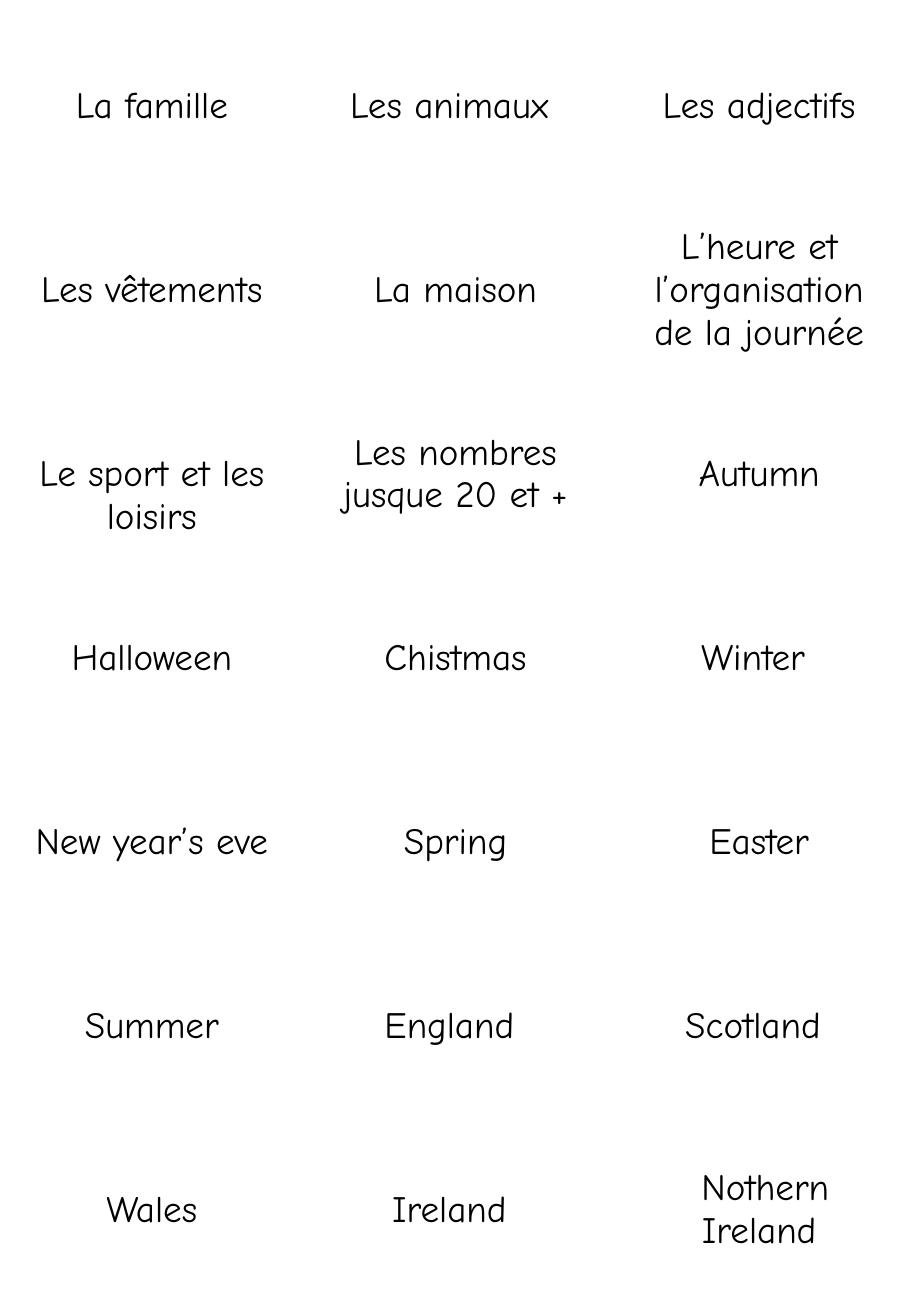
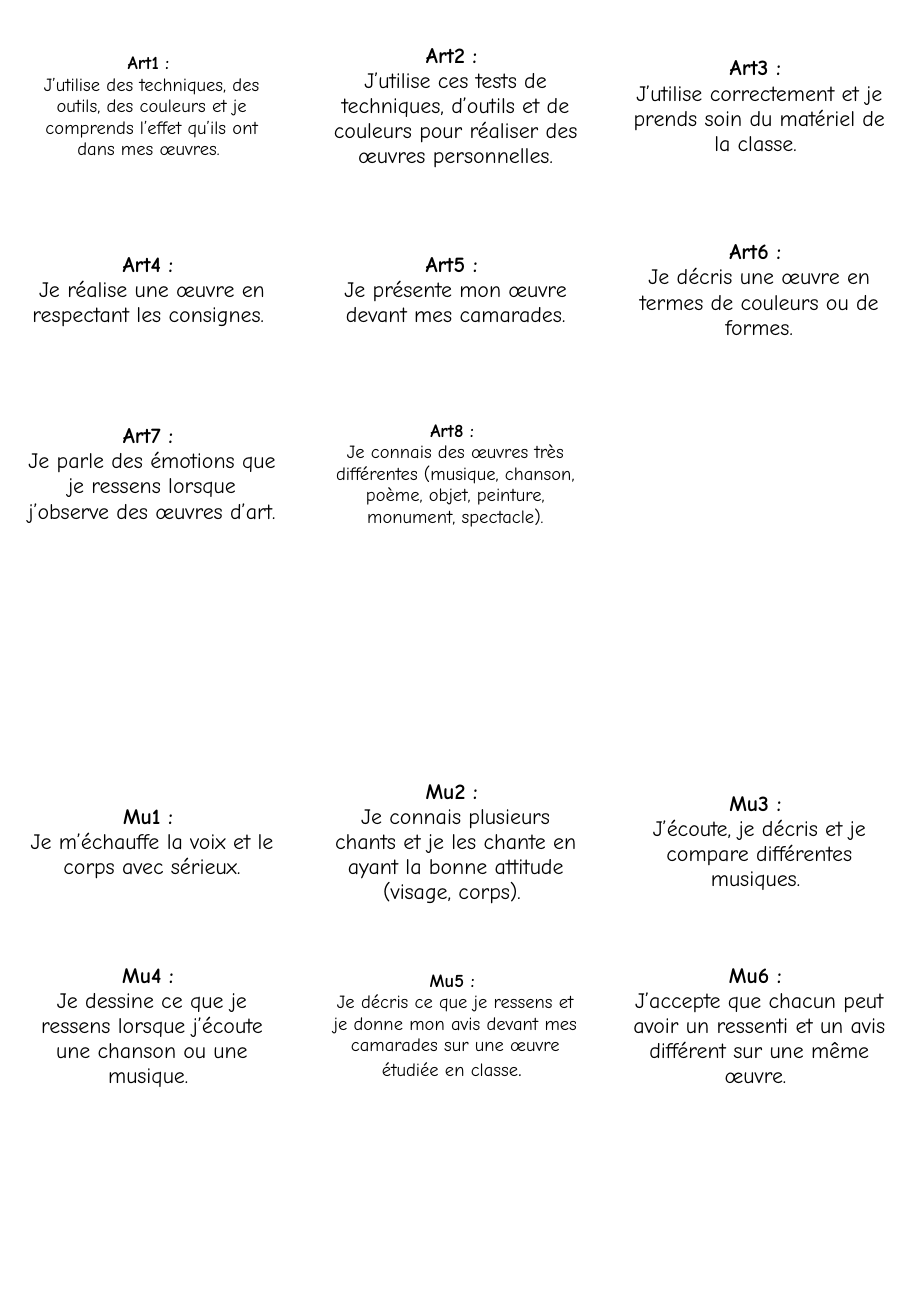
from pptx import Presentation
from pptx.dml.color import RGBColor
from pptx.enum.text import MSO_ANCHOR, PP_ALIGN
from pptx.util import Pt

CENTER = PP_ALIGN.CENTER
MIDDLE = MSO_ANCHOR.MIDDLE

# Shared look
COLORS = {"text": "000000", "paper": "FFFFFF"}
FONT = "Comic Neue"
SLIDE_WIDTH, SLIDE_HEIGHT = 540, 780
TABLE_TOP = 8.6
COLUMNS, ROWS = 3, 7
ROW_HEIGHT = 109.03
MARGIN_X, MARGIN_Y = 15, 10

# Sizes of the label cards
THEME_SIZE = 22
THEME_LINE = 25.3
SKILL_SIZE, SMALL_SKILL_SIZE = 13, 11

THEMES = [
    ["La famille", "Les animaux ", "Les adjectifs"],
    ["Les vêtements", "La maison", "L’heure et l’organisation de la journée"],
    ["Le sport et les loisirs", "Les nombres jusque 20 et +", "Autumn"],
    ["Halloween", "Chistmas", "Winter "],
    ["New year’s eve", "Spring", "Easter"],
    ["Summer", "England ", "Scotland "],
    ["Wales", "Ireland ", " Nothern Ireland"],
]
LOWERED_THEME = "Le sport et les loisirs"

ART_SKILLS = [
    "J’utilise des techniques, des outils, des couleurs et je comprends l’effet "
    "qu’ils ont dans mes œuvres. ",
    "J’utilise ces tests de techniques, d’outils et de couleurs pour réaliser "
    "des œuvres personnelles.",
    "J’utilise correctement et je prends soin du matériel de la classe. ",
    "Je réalise une œuvre en respectant les consignes. ",
    "Je présente mon œuvre devant mes camarades.",
    "Je décris une œuvre en termes de couleurs ou de formes.",
    "Je parle des émotions que je ressens lorsque j’observe des œuvres d’art. ",
    "Je connais des œuvres très différentes (musique, chanson, poème, objet, "
    "peinture, monument, spectacle).",
]
MUSIC_SKILLS = [
    "Je m’échauffe la voix et le corps avec sérieux.",
    "Je connais plusieurs chants et je les chante en ayant la bonne attitude "
    "(visage, corps). ",
    "J’écoute, je décris et je compare différentes musiques. ",
    "Je dessine ce que je ressens lorsque j’écoute une chanson ou une musique. ",
    "Je décris ce que je ressens et je donne mon avis devant mes camarades sur "
    "une œuvre étudiée en classe",
    "J’accepte que chacun peut avoir un ressenti et un avis différent sur une "
    "même œuvre. ",
]
SMALL_SKILLS = {"Art1", "Art8", "Mu5"}
SKILL_ENDINGS = {"Mu5": ". "}
# Prefix, first table row, skills
SKILL_GROUPS = [("Art", 0, ART_SKILLS), ("Mu", 4, MUSIC_SKILLS)]


def color(name):
    return RGBColor.from_string(COLORS[name])


def add_card_table(presentation):
    """Add a slide filled with a grid of white cards."""
    slide = presentation.slides.add_slide(presentation.slide_layouts[6])
    frame = slide.shapes.add_table(
        ROWS, COLUMNS, 0, Pt(TABLE_TOP), Pt(SLIDE_WIDTH), Pt(ROWS * ROW_HEIGHT))
    table = frame.table
    table.first_row = False
    table.horz_banding = False
    for column in table.columns:
        column.width = Pt(SLIDE_WIDTH / COLUMNS)
    for row in table.rows:
        row.height = Pt(ROW_HEIGHT)
    for cell in table.iter_cells():
        cell.fill.solid()
        cell.fill.fore_color.rgb = color("paper")
        cell.vertical_anchor = MIDDLE
        cell.margin_left = cell.margin_right = Pt(MARGIN_X)
        cell.margin_top = cell.margin_bottom = Pt(MARGIN_Y)
    return table


def add_run(paragraph, text, size, bold=False):
    paragraph.alignment = CENTER
    run = paragraph.add_run()
    run.text = text
    run.font.name = FONT
    run.font.size = Pt(size)
    run.font.bold = bold
    run.font.color.rgb = color("text")


def add_theme(cell, theme):
    add_run(cell.text_frame.paragraphs[0], theme, THEME_SIZE)
    if theme == LOWERED_THEME:
        cell.margin_top = Pt(MARGIN_Y + THEME_LINE)


def add_skill(cell, label, skill):
    size = SMALL_SKILL_SIZE if label in SMALL_SKILLS else SKILL_SIZE
    add_run(cell.text_frame.paragraphs[0], f"{label} : ", size, bold=True)
    paragraph = cell.text_frame.add_paragraph()
    add_run(paragraph, skill, size)
    if label in SKILL_ENDINGS:
        add_run(paragraph, SKILL_ENDINGS[label], SKILL_SIZE)


def main():
    presentation = Presentation()
    presentation.slide_width = Pt(SLIDE_WIDTH)
    presentation.slide_height = Pt(SLIDE_HEIGHT)

    # Theme cards
    table = add_card_table(presentation)
    for row, themes in enumerate(THEMES):
        for column, theme in enumerate(themes):
            add_theme(table.cell(row, column), theme)

    # Art and music skill cards
    table = add_card_table(presentation)
    for prefix, first_row, skills in SKILL_GROUPS:
        for index, skill in enumerate(skills):
            row, column = divmod(index, COLUMNS)
            add_skill(table.cell(first_row + row, column),
                      f"{prefix}{index + 1}", skill)

    presentation.save("out.pptx")


if __name__ == "__main__":
    main()
